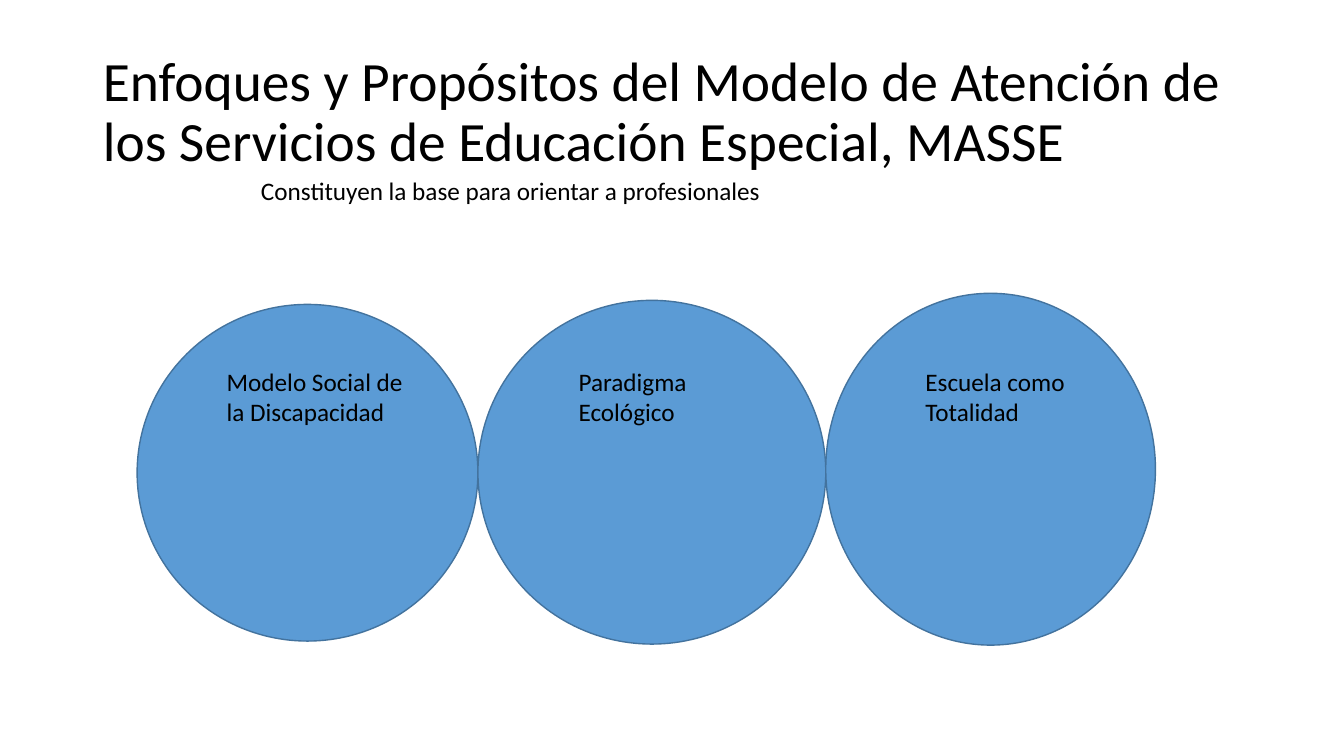
import pptx
import pptx.dml.color
import pptx.enum.shapes
import pptx.enum.text
import pptx.util

Inches = pptx.util.Inches
BLACK = pptx.dml.color.RGBColor(0x00, 0x00, 0x00)
BLUE = pptx.dml.color.RGBColor(0x5B, 0x9B, 0xD5)
DARK_BLUE = pptx.dml.color.RGBColor(0x43, 0x73, 0x9E)
FONT = "Calibri"

TITLE = ("Enfoques y Propósitos del Modelo de Atención de los Servicios "
         "de Educación Especial, MASSE")
SUBTITLE = "Constituyen la base para orientar a profesionales"
# Label, circle width, circle height, circle top, label inset, label width
APPROACHES = [
    ("Modelo Social de la Discapacidad", 3.38, 3.34, 3.02, 0.79, 2.04),
    ("Paradigma Ecológico", 3.45, 3.41, 2.98, 0.9, 2),
    ("Escuela como Totalidad", 3.27, 3.49, 2.91, 0.89, 2),
]
CIRCLES_LEFT = 1.36
LABEL_TOP, LABEL_HEIGHT = 3.58, 0.71


def write(frame, text, size):
    """Put one left-aligned run in the frame and return its paragraph."""
    frame.word_wrap = True
    para = frame.paragraphs[0]
    para.alignment = pptx.enum.text.PP_ALIGN.LEFT
    span = para.add_run()
    span.text = text
    span.font.name = FONT
    span.font.size = pptx.util.Pt(size)
    span.font.color.rgb = BLACK
    return para


def add_title(page, left, top, width, height):
    title = page.shapes.title
    title.left, title.top = Inches(left), Inches(top)
    title.width, title.height = Inches(width), Inches(height)
    frame = title.text_frame
    frame.auto_size = pptx.enum.text.MSO_AUTO_SIZE.NONE
    frame.vertical_anchor = pptx.enum.text.MSO_ANCHOR.MIDDLE
    write(frame, TITLE, 39.6).line_spacing = 0.9


def add_label(page, text, left, top, width, height):
    box = page.shapes.add_textbox(Inches(left), Inches(top),
                                  Inches(width), Inches(height))
    write(box.text_frame, text, 18)
    box.text_frame.auto_size = pptx.enum.text.MSO_AUTO_SIZE.SHAPE_TO_FIT_TEXT


def add_circle(page, left, top, width, height):
    circle = page.shapes.add_shape(pptx.enum.shapes.MSO_SHAPE.OVAL,
                                   Inches(left), Inches(top),
                                   Inches(width), Inches(height))
    circle.shadow.inherit = False
    circle.fill.solid()
    circle.fill.fore_color.rgb = BLUE
    circle.line.color.rgb = DARK_BLUE
    circle.line.width = pptx.util.Pt(1)


def add_approaches(page, left):
    """Set the circles edge to edge from left, each with its label."""
    for label, width, height, top, inset, label_width in APPROACHES:
        add_circle(page, left, top, width, height)
        add_label(page, label, left + inset, LABEL_TOP,
                  label_width, LABEL_HEIGHT)
        left += width


def main():
    deck = pptx.Presentation()
    deck.slide_width, deck.slide_height = Inches(13.33), Inches(7.5)
    title_only = deck.slide_layouts.get_by_name("Title Only")
    page = deck.slides.add_slide(title_only)
    add_title(page, 0.92, 0.4, 11.5, 1.45)
    add_approaches(page, CIRCLES_LEFT)
    add_label(page, SUBTITLE, 2.49, 1.69, 7.95, 0.4)
    deck.save("out.pptx")


if __name__ == "__main__":
    main()
